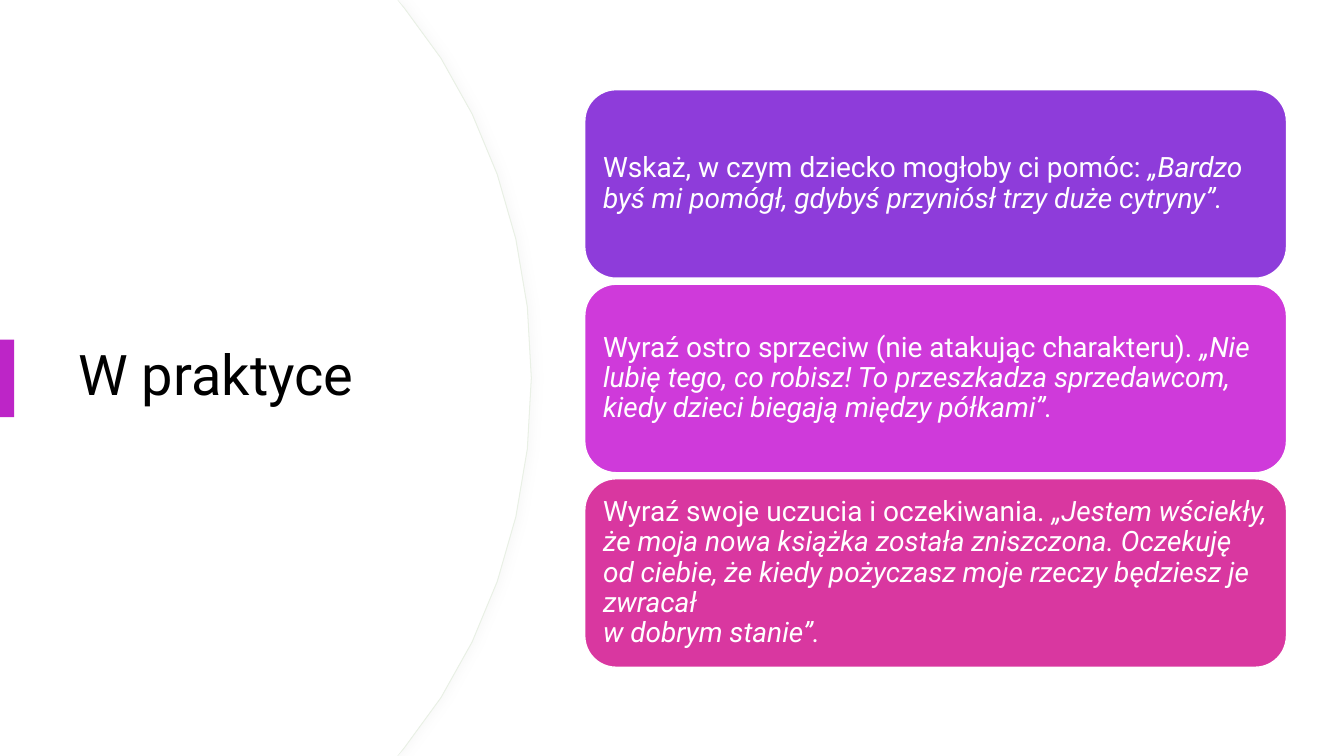
from pptx import Presentation
from pptx.dml.color import RGBColor
from pptx.enum.shapes import MSO_SHAPE as Preset
from pptx.enum.text import MSO_ANCHOR as Anchor, PP_ALIGN as Align
from pptx.oxml import parse_xml
from pptx.oxml.ns import nsdecls, qn
from pptx.util import Inches, Pt

COLORS = {
    "white": "FFFFFF", "black": "000000", "outline": "E9F0E5", "shadow": "D9D9D9",
    "accent": "BD25C7", "violet": "8E3CDA", "magenta": "CF3ADA", "pink": "D937A0",
}


def paint(shape, fill, line=None, width=1):
    shape.shadow.inherit = False
    shape.fill.solid()
    shape.fill.fore_color.rgb = RGBColor.from_string(COLORS[fill])
    if line:
        shape.line.color.rgb = RGBColor.from_string(COLORS[line])
        shape.line.width = Pt(width)
    else:
        shape.line.fill.background()


def write(box, spans, size=20, color="white", inset=0.09):
    """Fill a box with (text, italic) spans; a newline becomes a line break."""
    frame = box.text_frame
    frame.word_wrap = True
    frame.vertical_anchor = Anchor.MIDDLE
    frame.margin_left = frame.margin_right = Inches(inset)
    frame.margin_top = frame.margin_bottom = Inches(0.08)
    para = frame.paragraphs[0]
    para.alignment = Align.LEFT
    para.line_spacing = 0.9
    for text, italic in spans:
        for index, part in enumerate(text.split("\n")):
            if index:
                para.add_line_break()
            span = para.add_run()
            span.text = part
            span.font.name = "Roboto"
            span.font.size = Pt(size)
            span.font.italic = italic
            span.font.color.rgb = RGBColor.from_string(COLORS[color])


deck = Presentation()
deck.slide_width, deck.slide_height = Inches(13.33), Inches(7.5)
page = deck.slides.add_slide(deck.slide_layouts[6])
shapes = page.shapes

# White backdrop
backdrop = shapes.add_shape(Preset.RECTANGLE, 0, 0, deck.slide_width, deck.slide_height)
paint(backdrop, "white")

# Left panel with a bulging edge: an outlined layer, then a plain one on top
STEPS = 6
for right, line in ((5.27, "outline"), (5.26, None)):
    shoulder = right - 1.26
    upper = []
    for step in range(STEPS + 1):
        t = step / STEPS
        x = (shoulder * (1 - t) ** 3 + 3 * (right - 0.48) * t * (1 - t) ** 2
             + 3 * right * t ** 2 * (1 - t) + right * t ** 3)
        y = (0.08 * (1 - t) ** 3 + 3 * 1.02 * t * (1 - t) ** 2
             + 3 * 2.32 * t ** 2 * (1 - t) + 3.75 * t ** 3)
        upper.append((x, y))
    lower = [(x, 7.5 - y) for x, y in reversed(upper[:-1])]
    edge = [(3.94, 0)] + upper + lower + [(3.94, 7.5), (0, 7.5)]
    builder = shapes.build_freeform(0, 0)
    builder.add_line_segments([(Inches(x), Inches(y)) for x, y in edge])
    panel = builder.convert_to_shape()
    paint(panel, "white", line, 0.75)
    if line:
        panel.element.spPr.find(qn("a:effectLst")).append(parse_xml(
            f'<a:outerShdw {nsdecls("a")} blurRad="{Pt(6)}" dist="{Pt(3)}" dir="0">'
            f'<a:srgbClr val="{COLORS["shadow"]}"><a:alpha val="15000"/></a:srgbClr>'
            '</a:outerShdw>'))

# Title and its accent bar
title = shapes.add_textbox(Inches(0.68), Inches(1.27), Inches(3.94), Inches(4.95))
write(title, [("W praktyce", False)], size=40, color="black", inset=0.1)
bar = shapes.add_shape(Preset.RECTANGLE, 0, Inches(3.37), Inches(0.14), Inches(0.77))
paint(bar, "accent")

# Stacked advice cards
CARDS = [
    ("violet", "Wskaż, w czym dziecko mogłoby ci pomóc: ",
     "„Bardzo byś mi pomógł, gdybyś przyniósł trzy duże cytryny”."),
    ("magenta", "Wyraź ostro sprzeciw (nie atakując charakteru). ",
     "„Nie lubię tego, co robisz! To przeszkadza sprzedawcom, "
     "kiedy dzieci biegają między półkami”."),
    ("pink", "Wyraź swoje uczucia i oczekiwania.",
     " „Jestem wściekły, że moja nowa książka została zniszczona. Oczekuję "
     "od ciebie, że kiedy pożyczasz moje rzeczy będziesz je zwracał \nw dobrym stanie”."),
]
for row, (fill, advice, quote) in enumerate(CARDS):
    card = shapes.add_shape(Preset.ROUNDED_RECTANGLE, Inches(5.8),
                            Inches(0.89 + 1.93 * row), Inches(6.96), Inches(1.87))
    paint(card, fill, "white")
    write(card, [(advice, False), (quote, True)])

deck.save("out.pptx")
